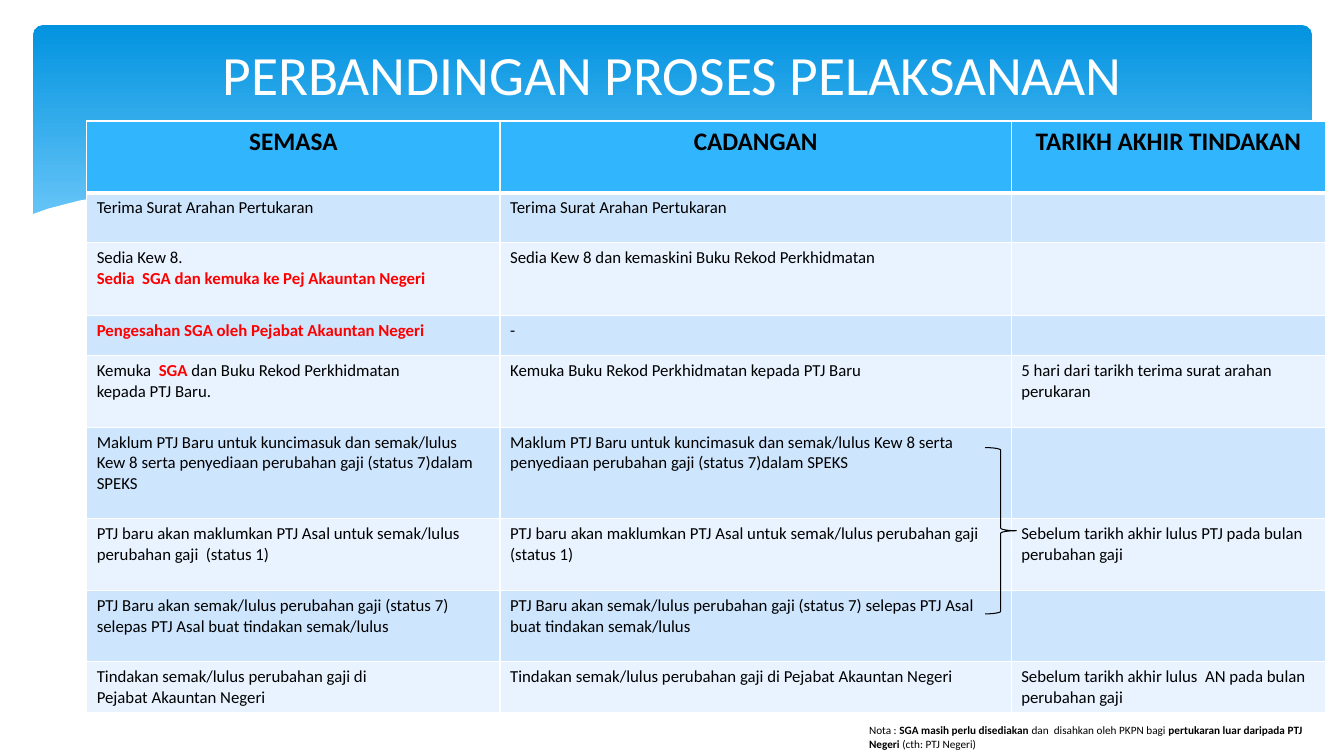
from lxml.etree import SubElement
from pptx import Presentation
from pptx.dml.color import RGBColor
from pptx.enum.shapes import MSO_SHAPE
from pptx.enum.text import MSO_ANCHOR, MSO_AUTO_SIZE, PP_ALIGN
from pptx.oxml.ns import qn
from pptx.util import Inches, Pt

COLORS = {
    "white": "FFFFFF", "black": "000000", "red": "FF0000",
    "top": "0293E0", "bottom": "83D3FE",
    "header": "31B6FD", "odd": "CEE5FE", "even": "E8F3FF",
}
FONT = "Calibri"

# Lengths are percentages of the slide's width and height
COLS = [30.76, 38.03, 23.41]
ROWS = [9.52, 6.61, 9.59, 5.36, 9.46, 12.1, 9.52, 9.39, 6.75]
WAVE = [
    (2.33, 28.4), (3.6, 27.6), (5.93, 26.53), (9.53, 25.47), (14.55, 24.67),
    (19.35, 24.53), (24.98, 24.8), (31.58, 25.87), (39.08, 27.6),
    (44.71, 29.33), (52.96, 31.87), (60.32, 33.87), (68.87, 35.73),
    (76.14, 36.67), (82.3, 36.93), (88.75, 36.13), (94.07, 34.53),
    (97.67, 32.8), (97.67, 43.87), (2.33, 43.87),
]

# Text between bars is emphasised
MAKLUM = ("Maklum PTJ Baru untuk kuncimasuk dan semak/lulus Kew 8 serta "
          "penyediaan perubahan gaji (status 7)dalam SPEKS")
ASAL = ("PTJ baru akan maklumkan PTJ Asal untuk semak/lulus "
        "perubahan gaji  (status 1)")
LULUS = ("PTJ Baru akan semak/lulus perubahan gaji (status 7) selepas "
         "PTJ Asal buat tindakan semak/lulus")
TERIMA = "Terima Surat Arahan Pertukaran"
PROCESS = [
    ("SEMASA", "CADANGAN", "TARIKH AKHIR TINDAKAN"),
    (TERIMA, TERIMA, ""),
    ("Sedia Kew 8.\n|Sedia  SGA dan kemuka ke Pej Akauntan Negeri|",
     "Sedia Kew 8 dan kemaskini Buku Rekod Perkhidmatan", ""),
    ("|Pengesahan SGA oleh Pejabat Akauntan Negeri|", "-", ""),
    ("Kemuka  |SGA |dan Buku Rekod Perkhidmatan\nkepada PTJ Baru.",
     "Kemuka Buku Rekod Perkhidmatan kepada PTJ Baru",
     "5 hari dari tarikh terima surat arahan perukaran"),
    (MAKLUM, MAKLUM, ""),
    (ASAL, ASAL, "Sebelum tarikh akhir lulus PTJ pada bulan perubahan gaji"),
    (LULUS, LULUS, ""),
    ("Tindakan semak/lulus perubahan gaji di\nPejabat Akauntan Negeri",
     "Tindakan semak/lulus perubahan gaji di Pejabat Akauntan Negeri",
     "Sebelum tarikh akhir lulus  AN pada bulan perubahan gaji"),
]
NOTE = ("Nota : |SGA masih perlu disediakan |dan  disahkan oleh PKPN bagi "
        "|pertukaran luar daripada PTJ Negeri |(cth: PTJ Negeri)")


def rgb(name):
    return RGBColor.from_string(COLORS[name])


class SlideBuilder:
    def __init__(self, prs):
        self.width, self.height = prs.slide_width, prs.slide_height
        self.s = prs.slides.add_slide(prs.slide_layouts[6])

    def x(self, share):
        return round(self.width * share / 100)

    def y(self, share):
        return round(self.height * share / 100)

    def box(self, left, top, width, height):
        return self.x(left), self.y(top), self.x(width), self.y(height)

    def style_font(self, font, size, color, bold=False):
        values = {"name": FONT, "size": Pt(size), "bold": bold}
        for key, value in values.items():
            setattr(font, key, value)
        font.color.rgb = rgb(color)

    def fill_text(self, tf, text, size, color="black", bold=False,
                  align=PP_ALIGN.LEFT, accent="black"):
        for i, line in enumerate(text.split("\n")):
            p = tf.add_paragraph() if i else tf.paragraphs[0]
            p.alignment = align
            if not line:
                p.font.size = Pt(size)
            for j, part in enumerate(line.split("|")):
                if part:
                    r = p.add_run()
                    r.text = part
                    marked = j % 2 == 1
                    self.style_font(r.font, size, accent if marked else color,
                                    bold or marked)

    def text(self, box, text, size, frame, **style):
        tf = self.s.shapes.add_textbox(*self.box(*box)).text_frame
        for key, value in {"word_wrap": True, **frame}.items():
            setattr(tf, key, value)
        self.fill_text(tf, text, size, **style)

    def banner(self, box):
        sp = self.s.shapes.add_shape(MSO_SHAPE.ROUNDED_RECTANGLE,
                                     *self.box(*box))
        sp.adjustments[0] = 0.034
        sp.shadow.inherit = False
        sp.line.fill.background()
        sp.fill.gradient()
        sp.fill.gradient_angle = 270
        stops = zip(sp.fill.gradient_stops, (("top", 0), ("bottom", 0.9)))
        for stop, (color, position) in stops:
            stop.color.rgb = rgb(color)
            stop.position = position

    def outline(self, points, color):
        (x0, y0), *rest = [(self.x(px), self.y(py)) for px, py in points]
        builder = self.s.shapes.build_freeform(x0, y0)
        builder.add_line_segments(rest, close=True)
        sp = builder.convert_to_shape()
        sp.shadow.inherit = False
        sp.fill.solid()
        sp.fill.fore_color.rgb = rgb(color)
        sp.line.fill.background()

    def brace(self, box):
        sp = self.s.shapes.add_shape(MSO_SHAPE.RIGHT_BRACE, *self.box(*box))
        sp.shadow.inherit = False
        sp.fill.background()
        sp.line.color.rgb = rgb("black")
        sp.line.width = Pt(0.75)

    def borders(self, cell, top, bottom):
        tcPr = cell._tc.get_or_add_tcPr()
        widths = {"a:lnL": 1, "a:lnR": 1, "a:lnT": top, "a:lnB": bottom}
        for i, (tag, width) in enumerate(widths.items()):
            ln = SubElement(tcPr, qn(tag), w=str(Pt(width)))
            fill = SubElement(ln, qn("a:solidFill"))
            SubElement(fill, qn("a:srgbClr"), val=COLORS["white"])
            tcPr.insert(i, ln)

    def table(self, left, top, cols, rows, content):
        box = self.box(left, top, sum(cols), sum(rows))
        table = self.s.shapes.add_table(len(rows), len(cols), *box).table
        for column, width in zip(table.columns, cols):
            column.width = self.x(width)
        for i, (row, height) in enumerate(zip(table.rows, rows)):
            row.height = self.y(height)
            fill = ("odd" if i % 2 else "even") if i else "header"
            style = {"size": 12, "accent": "red"} if i else {
                "size": 18, "bold": True, "align": PP_ALIGN.CENTER}
            for cell, text in zip(row.cells, content[i]):
                cell.fill.solid()
                cell.fill.fore_color.rgb = rgb(fill)
                self.borders(cell, 3 if i == 1 else 1, 1 if i else 3)
                self.fill_text(cell.text_frame, text, **style)


def main():
    prs = Presentation()
    prs.slide_width, prs.slide_height = Inches(13.33), Inches(7.5)
    slide = SlideBuilder(prs)

    # Banner with wave edge and title
    slide.banner((2.48, 3.33, 95.12, 36))
    slide.outline(WAVE, "white")
    slide.text((5.03, 4.93, 90.02, 9.47), "PERBANDINGAN PROSES PELAKSANAAN",
               39.6, {"vertical_anchor": MSO_ANCHOR.MIDDLE},
               color="white", align=PP_ALIGN.CENTER)

    # Comparison table
    slide.table(6.45, 16, COLS, ROWS, PROCESS)

    # Note and brace
    slide.text((63.92, 95.07, 35.41, 4.93), NOTE, 8,
               {"auto_size": MSO_AUTO_SIZE.SHAPE_TO_FIT_TEXT})
    slide.brace((73.29, 59.2, 2.33, 22))

    prs.save("out.pptx")


if __name__ == "__main__":
    main()
